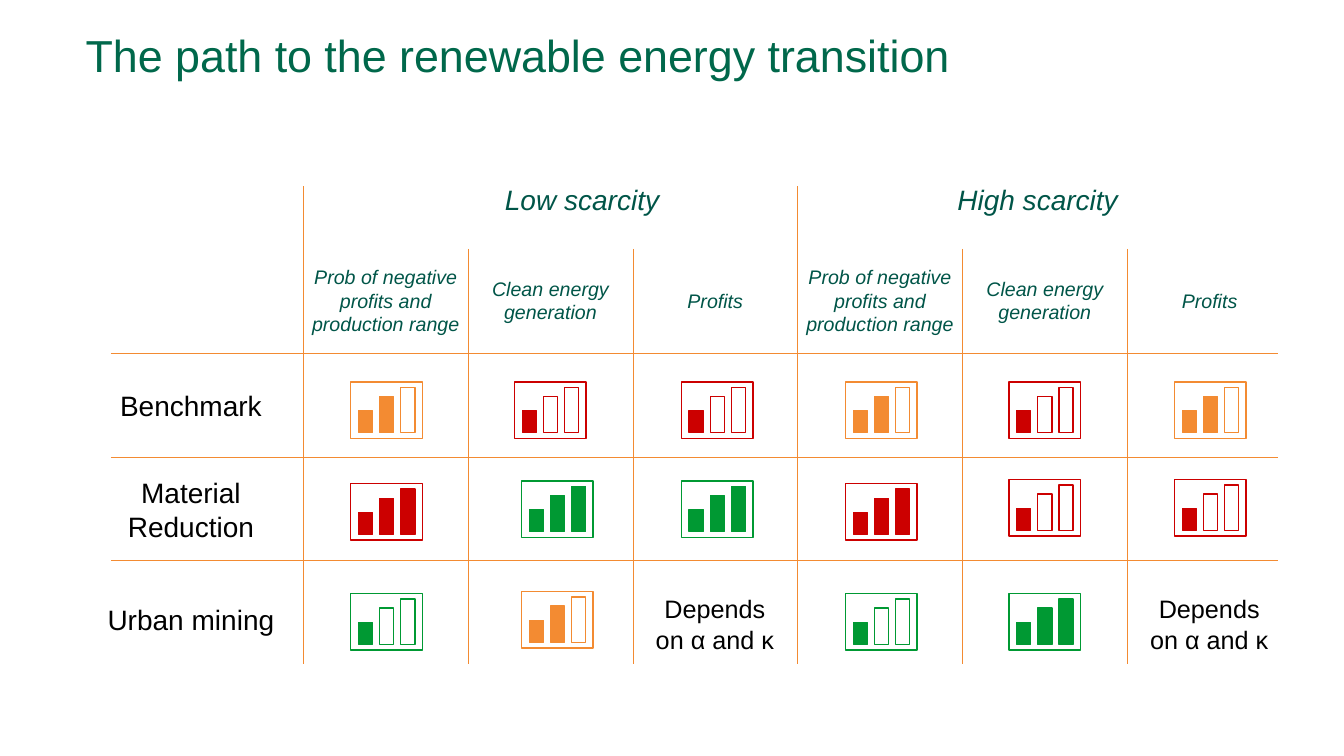
from pptx import Presentation
from pptx import util as u
from pptx.dml.color import RGBColor
from pptx.enum import shapes, text
from pptx.oxml.ns import qn
from lxml import etree

COLORS = {"title": "00684B", "heading": "005548", "text": "000000", "white": "FFFFFF",
          "orange": "F38B32", "red": "CC0000", "green": "009933"}
COLUMN_WIDTH = 117.7
ROW_TOPS = [252.7, 326.9, 400.3]
TABLE_BOTTOM = 474.5
HEADER_TOP = 177.8
SCENARIO_TOP = 133.2
LABELS = [("Benchmark", 53.3), ("Material Reduction", 53.3), ("Urban mining", 63.4)]
MEASURES = [("Prob of negative profits and production range", 0),
            ("Clean energy generation", 3.6), ("Profits", 3.6)]
DEPENDS = "Depends on α and κ"
LOW_SCARCITY = [
    [("orange", 2, 33.8, 20.2), ("red", 1, 33.1, 20.2), ("red", 1, 34.6, 20.2)],
    [("red", 3, 33.8, 18.7), ("green", 3, 38.2, 16.6), ("green", 3, 34.6, 16.6)],
    [("green", 1, 33.8, 23.8), ("orange", 2, 38.2, 22.3), DEPENDS]]
HIGH_SCARCITY = [
    [("orange", 2, 34.2, 20.2), ("red", 1, 33.1, 20.2), ("orange", 2, 33.8, 20.2)],
    [("red", 3, 34.2, 18.7), ("red", 1, 33.1, 15.8), ("red", 1, 33.8, 15.8)],
    [("green", 1, 34.2, 23.8), ("green", 3, 33.1, 23.8), DEPENDS]]


def color(name):
    """Return the named palette colour."""
    return RGBColor.from_string(COLORS[name])


def points(*values):
    """Convert numbers to point lengths."""
    return [u.Pt(value) for value in values]


def add_text(slide, box, words, size, color_name, italic=False, insets=(7.2, 3.6),
             align=text.PP_ALIGN.CENTER, anchor=text.MSO_ANCHOR.MIDDLE):
    """Add a wrapped one-paragraph text box and return its paragraph."""
    frame = slide.shapes.add_textbox(*points(*box)).text_frame
    frame.word_wrap = True
    frame.vertical_anchor = anchor
    frame.margin_left = frame.margin_right = u.Pt(insets[0])
    frame.margin_top = frame.margin_bottom = u.Pt(insets[1])
    frame.text = words
    paragraph = frame.paragraphs[0]
    paragraph.alignment = align
    font = paragraph.runs[0].font
    font.name, font.size, font.italic = "Arial", u.Pt(size), italic
    font.color.rgb = color(color_name)
    return paragraph


def add_rule(slide, x1, y1, x2, y2):
    """Add one thin orange table rule."""
    rule = slide.shapes.add_connector(shapes.MSO_CONNECTOR.STRAIGHT, *points(x1, y1, x2, y2))
    rule.line.color.rgb = color("orange")
    rule.line.width = u.Pt(0.5)
    etree.SubElement(rule._element.spPr, qn("a:effectLst"))


def add_box(group, box, line_name, fill_name=None):
    """Add an outlined rectangle, filled if a fill is named."""
    shape = group.shapes.add_shape(shapes.MSO_SHAPE.RECTANGLE, *points(*box))
    shape.shadow.inherit = False
    shape.line.color.rgb = color(line_name)
    shape.line.width = u.Pt(1)
    if fill_name:
        shape.fill.solid()
        shape.fill.fore_color.rgb = color(fill_name)
    else:
        shape.fill.background()


def add_level_icon(slide, left, top, color_name, level):
    """Draw a framed three-bar icon with the first bars filled up to the level."""
    group = slide.shapes.add_group_shape()
    for index, height in enumerate([15.8, 25.9, 32.4]):
        bar = (left + 5.6 + 15.1 * index, top + 36.2 - height, 10.1, height)
        add_box(group, bar, color_name, color_name if index < level else "white")
    add_box(group, (left, top, 51.1, 40.3), color_name)


def add_row_labels(slide, left, width):
    """Place row names and the horizontal rules above them."""
    for (label, height), top in zip(LABELS, ROW_TOPS):
        add_rule(slide, 79.2, top, 913, top)
        add_text(slide, (left, top + 10.2, width, height), label, 20, "text")


def add_scenario(slide, left, name, name_offset, rows):
    """Build one scarcity scenario with its heading, measures and ratings."""
    add_text(slide, (left + name_offset, 115.9, 300.2, 53.3), name, 20, "heading", italic=True)
    for column, (measure, inset) in enumerate(MEASURES):
        x = left + column * COLUMN_WIDTH
        add_rule(slide, x, HEADER_TOP if column else SCENARIO_TOP, x, TABLE_BOTTOM)
        add_text(slide, (x + inset, 187.9, COLUMN_WIDTH - 2 * inset, 53.3), measure, 14,
                 "heading", italic=True, insets=(0, 0))
        for top, row in zip(ROW_TOPS, rows):
            rating = row[column]
            if rating == DEPENDS:
                add_text(slide, (x + 6, top + 27.4, 105.1, 36), rating, 18, "text")
            else:
                color_name, level, shift_x, shift_y = rating
                add_level_icon(slide, x + shift_x, top + shift_y, color_name, level)


def main():
    """Build and save the presentation."""
    presentation = Presentation()
    presentation.slide_width, presentation.slide_height = points(960, 540)
    slide = presentation.slides.add_slide(presentation.slide_layouts[6])
    title = add_text(slide, (61.2, 23.8, 667.4, 74.2), "The path to the renewable energy transition",
                     32, "title", insets=(0, 0), align=text.PP_ALIGN.LEFT,
                     anchor=text.MSO_ANCHOR.TOP)
    title.line_spacing = 0.9
    add_row_labels(slide, 62.6, 147.6)
    add_scenario(slide, 216.7, "Low scarcity", 49, LOW_SCARCITY)
    add_scenario(slide, 216.7 + 3 * COLUMN_WIDTH, "High scarcity", 21.3, HIGH_SCARCITY)
    presentation.save("out.pptx")


if __name__ == "__main__":
    main()
